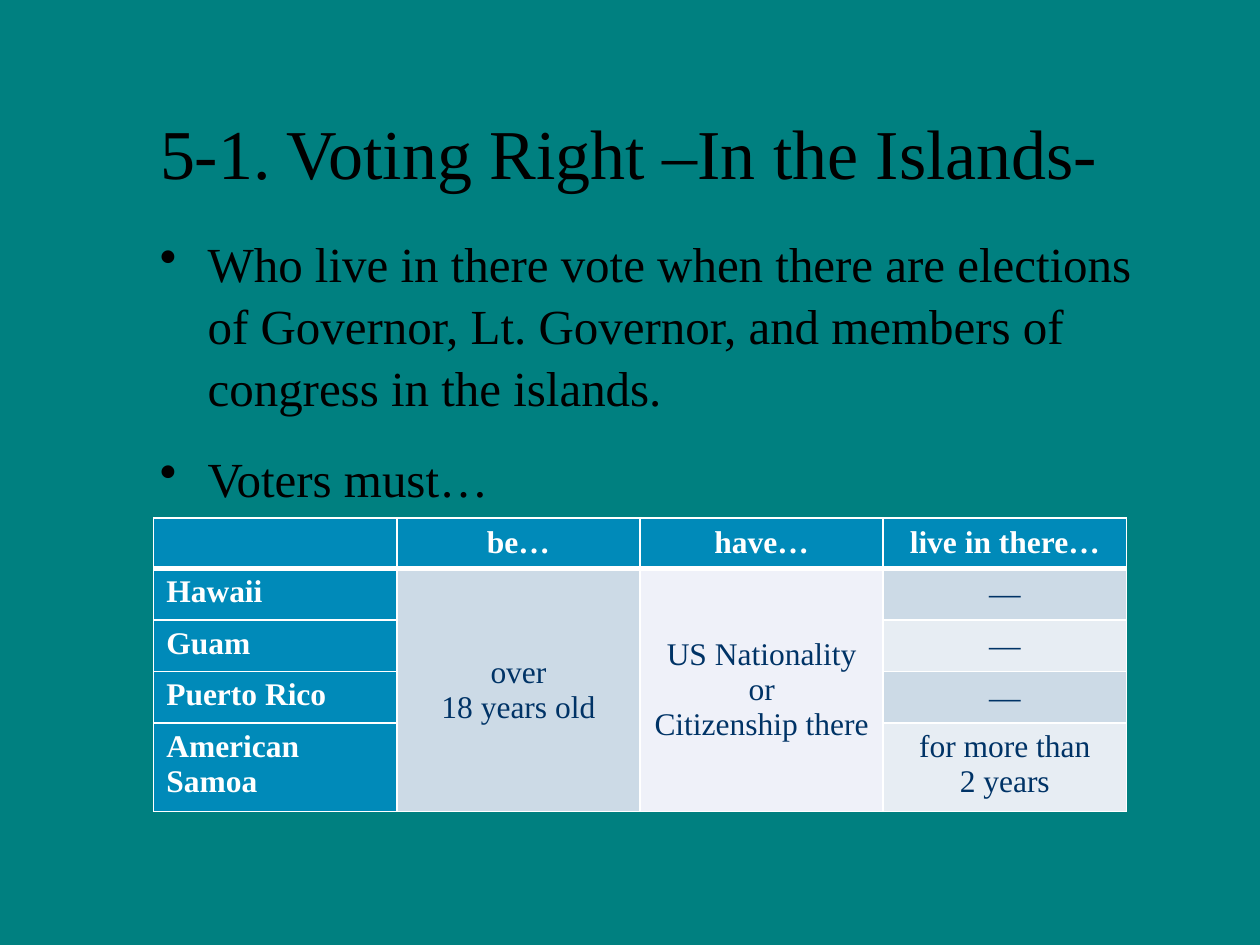
from lxml.etree import SubElement
from pptx import Presentation
from pptx.dml.color import RGBColor
from pptx.enum.text import MSO_ANCHOR as ANCHOR, PP_ALIGN as ALIGN
from pptx.oxml.ns import qn
from pptx.util import Inches, Pt

TEAL = RGBColor(0x00, 0x80, 0x80)
BLACK = RGBColor(0x00, 0x00, 0x00)
WHITE = RGBColor(0xFF, 0xFF, 0xFF)
NAVY = RGBColor(0x00, 0x33, 0x66)
BLUE = RGBColor(0x00, 0x8A, 0xB9)
MIST = RGBColor(0xCC, 0xDA, 0xE6)
PALE = RGBColor(0xE7, 0xED, 0xF3)
LILAC = RGBColor(0xEF, 0xF1, 0xF9)
FONT = "Times New Roman"

TITLE = "5-1. Voting Right –In the Islands-"
POINTS = [
    "Who live in there vote when there are elections of Governor, "
    "Lt. Governor, and members of congress in the islands.",
    "Voters must…",
]
HEADERS = ["", "be…", "have…", "live in there…"]
ISLANDS = ["Hawaii", "Guam", "Puerto Rico", "American\nSamoa"]
RESIDENCE = ["―", "―", "―", "for more than\n2 years"]
COL_WIDTH = 1.93
ROW_HEIGHTS = [0.37, 0.41, 0.41, 0.41, 0.67]


def style_text(tf, size, color, bold=False, align=ALIGN.LEFT):
    """Format every paragraph and run of a text frame."""
    for p in tf.paragraphs:
        p.alignment = align
        for r in p.runs:
            r.font.name = FONT
            r.font.size = Pt(size)
            r.font.bold = bold
            r.font.color.rgb = color


def add_title(s):
    """Place the title and set its text."""
    title = s.shapes.title
    title.left, title.top = Inches(1.17), Inches(0.3)
    title.width, title.height = Inches(8.58), Inches(1.28)
    tf = title.text_frame
    tf.text = TITLE
    tf.vertical_anchor = ANCHOR.BOTTOM
    tf.paragraphs[0].line_spacing = 0.8
    style_text(tf, 40, BLACK)


def add_bullets(s):
    """Add the bulleted statements."""
    box = s.shapes.add_textbox(Inches(1.17), Inches(1.75), Inches(8), Inches(4.95))
    tf = box.text_frame
    tf.word_wrap = True
    tf.margin_top = Inches(0.08)
    tf.text = "\n".join(POINTS)
    for i, p in enumerate(tf.paragraphs):
        pPr = p._p.get_or_add_pPr()
        pPr.set("marL", str(Inches(0.38)))
        pPr.set("indent", str(-Inches(0.38)))
        SubElement(pPr, qn("a:buChar"), char="•")
        p.line_spacing = 1.05
        p.space_before = Pt(16.8 if i else 0)
    style_text(tf, 28, BLACK)


def set_borders(cell, bottom=1, top=1):
    """Draw white lines around a cell."""
    tcPr = cell._tc.get_or_add_tcPr()
    for side, width in (("L", 1), ("R", 1), ("T", top), ("B", bottom)):
        ln = SubElement(tcPr, qn(f"a:ln{side}"), w=str(Pt(width)))
        fill = SubElement(ln, qn("a:solidFill"))
        SubElement(fill, qn("a:srgbClr"), val=str(WHITE))


def fill_cell(cell, text, fill, color=NAVY, bold=False, align=ALIGN.CENTER, anchor=ANCHOR.MIDDLE):
    """Set a cell's text, fill and alignment."""
    cell.fill.solid()
    cell.fill.fore_color.rgb = fill
    cell.vertical_anchor = anchor
    cell.text_frame.text = text
    style_text(cell.text_frame, 18, color, bold, align)


def add_requirements_table(s):
    """Add the table of voting requirements by island."""
    rows, cols = len(ROW_HEIGHTS), len(HEADERS)
    table = s.shapes.add_table(rows, cols, Inches(1.22), Inches(4.11),
                               Inches(COL_WIDTH * cols), Inches(sum(ROW_HEIGHTS))).table
    for col in table.columns:
        col.width = Inches(COL_WIDTH)
    for row, height in zip(table.rows, ROW_HEIGHTS):
        row.height = Inches(height)
    for r in range(rows):
        for c in range(cols):
            set_borders(table.cell(r, c), bottom=1 if r else 3, top=3 if r == 1 else 1)
    for c, header in enumerate(HEADERS):
        fill_cell(table.cell(0, c), header, BLUE, WHITE, True)
    for r, (island, residence) in enumerate(zip(ISLANDS, RESIDENCE), 1):
        fill_cell(table.cell(r, 0), island, BLUE, WHITE, True, ALIGN.LEFT, ANCHOR.TOP)
        fill_cell(table.cell(r, 3), residence, MIST if r % 2 else PALE,
                  anchor=ANCHOR.TOP if "\n" in residence else ANCHOR.MIDDLE)
    shared = [("over\n18 years old", MIST), ("US Nationality\nor\nCitizenship there", LILAC)]
    for c, (text, fill) in enumerate(shared, 1):
        table.cell(1, c).merge(table.cell(rows - 1, c))
        fill_cell(table.cell(1, c), text, fill)


def main():
    """Build and save the slide."""
    prs = Presentation()
    prs.slide_width, prs.slide_height = Inches(10), Inches(7.5)
    s = prs.slides.add_slide(prs.slide_layouts[5])
    s.background.fill.solid()
    s.background.fill.fore_color.rgb = TEAL
    add_title(s)
    add_bullets(s)
    add_requirements_table(s)
    prs.save("out.pptx")


if __name__ == "__main__":
    main()
